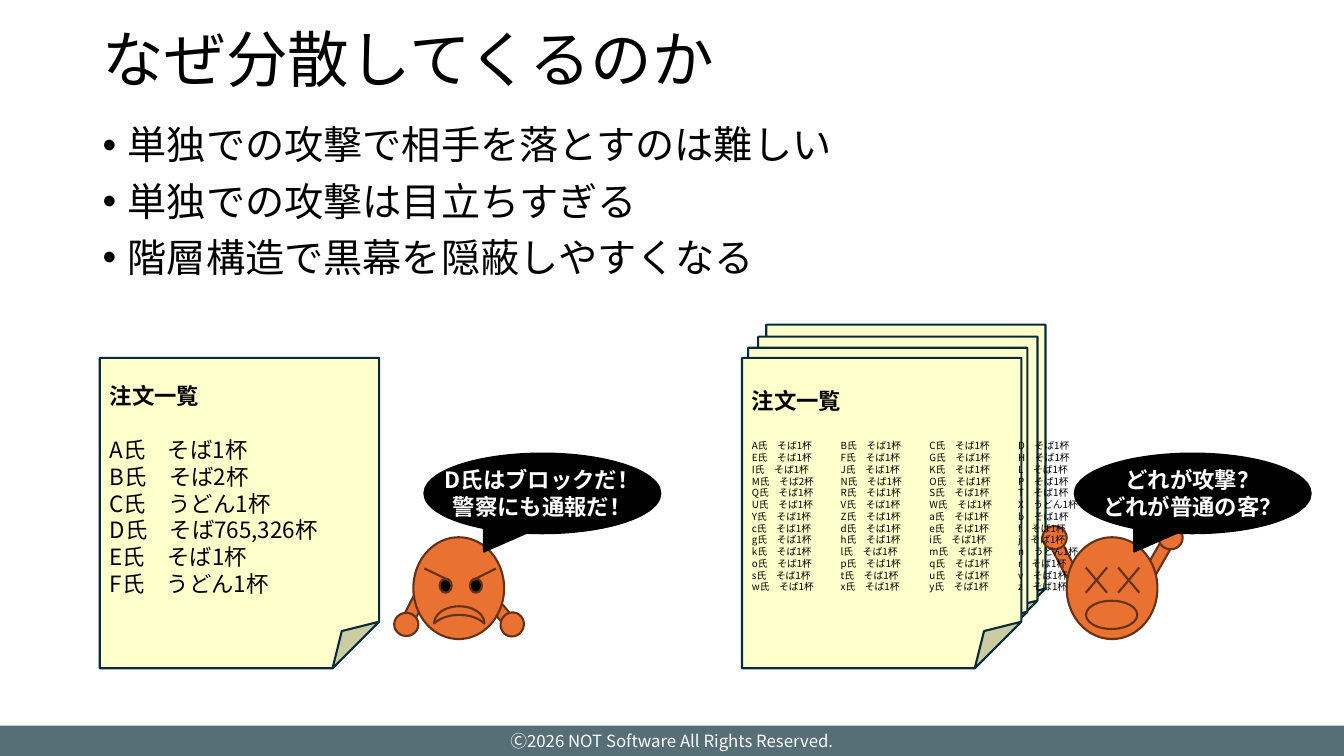
"""Build the slide on why attacks arrive from distributed sources."""
from lxml.etree import SubElement
from pptx import Presentation
from pptx.dml.color import RGBColor
from pptx.enum.shapes import MSO_CONNECTOR, MSO_SHAPE
from pptx.enum.text import MSO_ANCHOR, PP_ALIGN
from pptx.oxml.ns import qn
from pptx.util import Inches, Pt

FONT = "Noto Sans CJK JP"
PAPER, INK = "FFFFCC", "092A39"
SKIN, OUTLINE = "E97132", "663216"
BLACK, WHITE, SLATE = "000000", "FFFFFF", "566E76"


def draw(shapes, kind, place, fill, line=None, rotation=0):
    shape = shapes.add_shape(kind, *[Inches(value) for value in place])
    shape.shadow.inherit = False
    shape.rotation = rotation
    shape.fill.solid()
    shape.fill.fore_color.rgb = RGBColor.from_string(fill)
    if line:
        shape.line.color.rgb = RGBColor.from_string(line)
        shape.line.width = Pt(1.5)
    else:
        shape.line.fill.background()
    return shape


def write(frame, lines, size, color, bold=False, wrap=False, **layout):
    frame.word_wrap = wrap
    paras = []
    for number, line in enumerate(lines):
        para = frame.add_paragraph() if number or frame.text else frame.paragraphs[0]
        for name, value in layout.items():
            setattr(para, name, value)
        span = para.add_run()
        span.text = line
        for name, value in {"size": Pt(size), "bold": bold, "name": FONT}.items():
            setattr(span.font, name, value)
        span.font.color.rgb = RGBColor.from_string(color)
        SubElement(span.font._element, qn("a:ea"), typeface=FONT)
        paras.append(para)
    return paras


deck = Presentation()
deck.slide_width, deck.slide_height = Inches(13.33), Inches(7.5)
page = deck.slides.add_slide(deck.slide_layouts[5])
shapes = page.shapes

footer = draw(shapes, MSO_SHAPE.RECTANGLE, (0, 7.2, 13.33, 0.3), SLATE)
footer.text_frame.vertical_anchor = MSO_ANCHOR.MIDDLE
write(footer.text_frame, ["Ⓒ2026 NOT Software All Rights Reserved."], 12, WHITE,
      alignment=PP_ALIGN.CENTER)

for left, top in [(7.6, 3.22), (7.52, 3.34), (7.42, 3.45)]:
    draw(shapes, MSO_SHAPE.FOLDED_CORNER, (left, top, 2.77, 3.08), PAPER, INK)

title = shapes.title
title_place = {"left": 0.92, "top": 0.22, "width": 11.5, "height": 0.8}
for name, value in title_place.items():
    setattr(title, name, Inches(value))
title.text_frame.vertical_anchor = MSO_ANCHOR.MIDDLE
write(title.text_frame, ["なぜ分散してくるのか"], 44, BLACK, wrap=True,
      alignment=PP_ALIGN.LEFT, line_spacing=0.9)

reasons = ["単独での攻撃で相手を落とすのは難しい", "単独での攻撃は目立ちすぎる",
           "階層構造で黒幕を隠蔽しやすくなる"]
box = shapes.add_textbox(Inches(0.92), Inches(1.2), Inches(11.5), Inches(1.9))
for number, para in enumerate(write(box.text_frame, reasons, 28, BLACK, wrap=True)):
    props = para._p.get_or_add_pPr()
    props.set("marL", str(Inches(0.25)))
    props.set("indent", str(Inches(-0.25)))
    SubElement(props, qn("a:buFont"), typeface="Arial")
    SubElement(props, qn("a:buChar"), char="•")
    para.line_spacing = 0.9
    para.space_before = Pt(10 if number else 0)

bar, oval = MSO_SHAPE.RECTANGLE, MSO_SHAPE.OVAL
angry_parts = [
    (bar, (4.84, 5.72, 0.12, 0.54), SKIN, 139.8),
    (oval, (4.96, 6.08, 0.24, 0.23), SKIN, 110),
    (bar, (4.08, 5.7, 0.12, 0.54), SKIN, 27),
    (oval, (3.91, 6.08, 0.24, 0.23), SKIN, 0),
    (oval, (4.1, 5.33, 0.9, 1.01), SKIN, 0),
    (MSO_SHAPE.MOON, (4.47, 5.85, 0.17, 0.5), SKIN, 90),
    (oval, (4.66, 5.74, 0.12, 0.14), BLACK, 0),
    (oval, (4.36, 5.74, 0.12, 0.14), BLACK, 0),
]
angry_brows = [(4.68, 5.76, 4.92, 5.64), (4.46, 5.76, 4.21, 5.64)]
puzzled_parts = [
    (bar, (10.52, 5.33, 0.12, 0.54), SKIN, 332.7),
    (bar, (11.41, 5.3, 0.12, 0.54), SKIN, 29.8),
    (oval, (10.58, 5.33, 0.9, 1.01), SKIN, 0),
    (oval, (10.34, 5.22, 0.24, 0.23), SKIN, 0),
    (oval, (11.49, 5.22, 0.24, 0.23), SKIN, 0),
    (oval, (10.77, 5.96, 0.51, 0.28), SKIN, 0),
]
puzzled_eyes = [(start, 5.63, end, 5.88) for left in (10.77, 11.09)
                for start, end in [(left, left + 0.21), (left + 0.21, left)]]

few_orders = ["A氏　そば1杯", "B氏　そば2杯", "C氏　うどん1杯",
              "D氏　そば765,326杯", "E氏　そば1杯", "F氏　うどん1杯"]
customers = "ABCDEFGHIJKLMNOPQRSTUVWXYZabcdefghijklmnopqrstuvwxyz"
special = {"M": "そば2杯", "X": "うどん1杯", "n": "うどん1杯"}
entries = [name + ("" if number % 4 == 3 else "氏") + "　" + special.get(name, "そば1杯")
           for number, name in enumerate(customers)]
many_orders = ["\t".join(entries[start:start + 4]) for start in range(0, len(entries), 4)]

scenes = [
    (angry_parts, angry_brows, 0.99, few_orders, 16, 4.21,
     ["D氏はブロックだ！", "警察にも通報だ！"]),
    (puzzled_parts, puzzled_eyes, 7.36, many_orders, 7, 10.66,
     ["どれが攻撃？", "どれが普通の客？"]),
]
for parts, strokes, sheet_left, orders, size, speech_left, speech in scenes:
    face = shapes.add_group_shape()
    for kind, place, fill, rotation in parts:
        draw(face.shapes, kind, place, fill, OUTLINE, rotation)
    for stroke in strokes:
        line = face.shapes.add_connector(MSO_CONNECTOR.STRAIGHT,
                                         *[Inches(value) for value in stroke])
        line.line.color.rgb = RGBColor.from_string(OUTLINE)
        line.line.width = Pt(1.5)
        SubElement(line._element.spPr, qn("a:effectLst"))

    sheet = draw(shapes, MSO_SHAPE.FOLDED_CORNER, (sheet_left, 3.55, 2.77, 3.08), PAPER, INK)
    sheet.text_frame.vertical_anchor = MSO_ANCHOR.MIDDLE
    write(sheet.text_frame, ["注文一覧"], 16, BLACK, bold=True, alignment=PP_ALIGN.LEFT)
    rows = write(sheet.text_frame, orders, size, BLACK, alignment=PP_ALIGN.LEFT)
    rows[0].space_before = Pt(19)
    if "\t" in orders[0]:
        for row in rows:
            stops = SubElement(row._p.get_or_add_pPr(), qn("a:tabLst"))
            for column in range(1, 4):
                SubElement(stops, qn("a:tab"), pos=str(Inches(0.88 * column)), algn="l")

    callout = draw(shapes, MSO_SHAPE.OVAL_CALLOUT, (speech_left, 4.5, 2.34, 0.79), BLACK, BLACK)
    callout.adjustments[0], callout.adjustments[1] = -0.248, 0.73
    callout.text_frame.vertical_anchor = MSO_ANCHOR.MIDDLE
    write(callout.text_frame, speech, 16, WHITE, bold=True, alignment=PP_ALIGN.CENTER)

deck.save("out.pptx")
